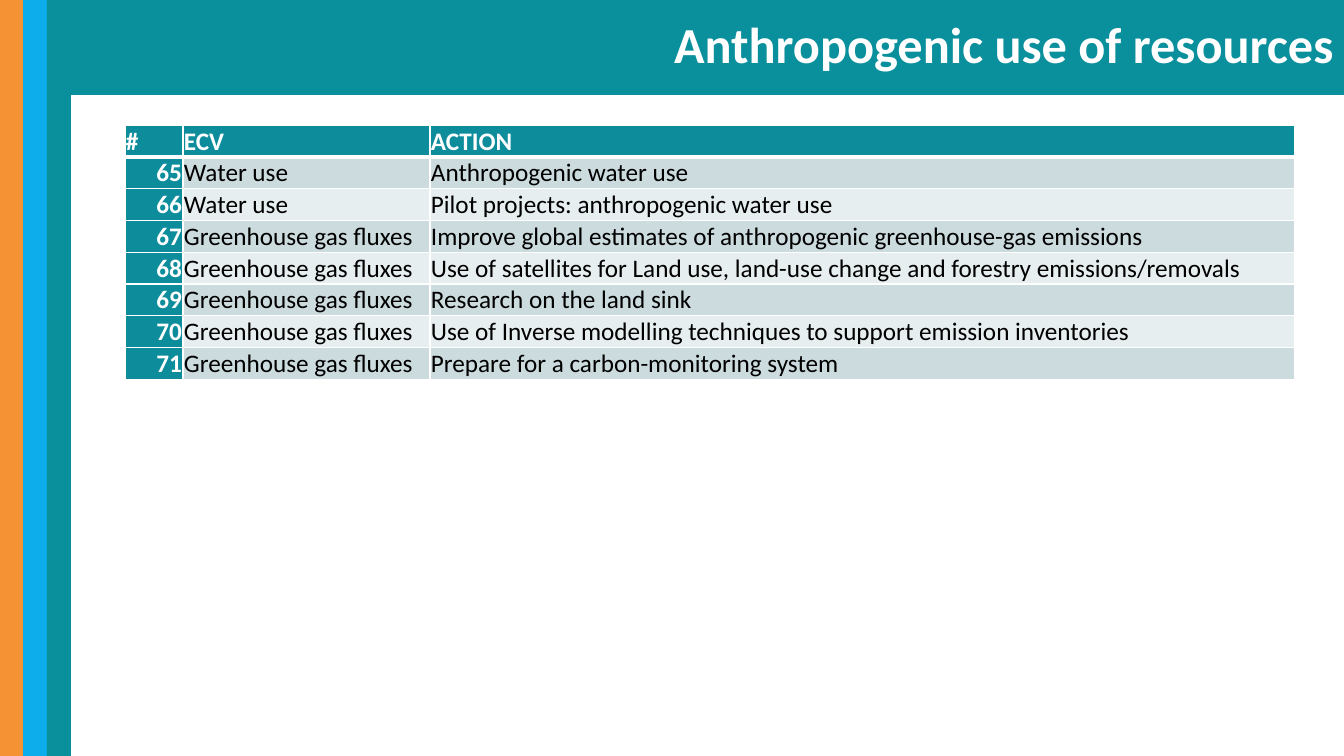
from lxml import etree
from pptx import Presentation
from pptx.dml.color import RGBColor
from pptx.enum.shapes import MSO_SHAPE
from pptx.enum.text import MSO_ANCHOR, PP_ALIGN
from pptx.oxml.ns import qn
from pptx.util import Pt

RECTANGLE = MSO_SHAPE.RECTANGLE
MIDDLE = MSO_ANCHOR.MIDDLE
LEFT, RIGHT, JUSTIFY = PP_ALIGN.LEFT, PP_ALIGN.RIGHT, PP_ALIGN.JUSTIFY

EMU_PER_PX = 914400 / 100.8
SLIDE_WIDTH, SLIDE_HEIGHT = 1344, 756
COLORS = {
    "orange": "F49234",
    "blue": "0CADEA",
    "teal": "0A8F9D",
    "table_teal": "0D8D9C",
    "dark_band": "CCDBDE",
    "light_band": "E7EEEF",
    "white": "FFFFFF",
    "black": "000000",
}
COLUMN_WIDTHS = [58, 247, 865]
ROW_HEIGHT = 21
HEADINGS = ["#", "ECV", "ACTION"]
FIRST_NUMBER = 65
ACTIONS = [
    ("Water use", "Anthropogenic water use"),
    ("Water use", "Pilot projects: anthropogenic water use"),
    ("Greenhouse gas fluxes", "Improve global estimates of anthropogenic greenhouse-gas emissions"),
    ("Greenhouse gas fluxes", "Use of satellites for Land use, land-use change and forestry emissions/removals"),
    ("Greenhouse gas fluxes", "Research on the land sink"),
    ("Greenhouse gas fluxes", "Use of Inverse modelling techniques to support emission inventories"),
    ("Greenhouse gas fluxes", "Prepare for a carbon-monitoring system"),
]


def px(value):
    return round(value * EMU_PER_PX)


def color(name):
    return RGBColor.from_string(COLORS[name])


def set_attributes(target, values):
    for name, value in values.items():
        setattr(target, name, value)


def write(text_frame, text, size, color_name, bold, alignment):
    paragraph = text_frame.paragraphs[0]
    paragraph.alignment = alignment
    run = paragraph.add_run()
    run.text = text
    set_attributes(run.font, {"name": "Calibri", "size": Pt(size), "bold": bold})
    run.font.color.rgb = color(color_name)
    return paragraph


def add_rectangle(slide, left, top, width, height, fill):
    shape = slide.shapes.add_shape(RECTANGLE, px(left), px(top), px(width), px(height))
    shape.shadow.inherit = False
    shape.fill.solid()
    shape.fill.fore_color.rgb = color(fill)
    shape.line.fill.background()
    return shape


def add_stripes(slide, left, top, width, height):
    names = ["orange", "blue", "teal"]
    edges = [left + width * index // len(names) for index in range(len(names) + 1)]
    for name, start, end in zip(names, edges, edges[1:]):
        add_rectangle(slide, start, top, end - start, height, name)


def add_title(slide, left, top, width, height):
    shape = add_rectangle(slide, left, top, width, height, "teal")
    set_attributes(shape.text_frame, {"word_wrap": True, "vertical_anchor": MIDDLE})
    paragraph = write(shape.text_frame, "Anthropogenic use of resources", 36, "white", True, RIGHT)
    paragraph.line_spacing = 0.9


def add_borders(cell, widths):
    properties = cell._tc.get_or_add_tcPr()
    for side, width in widths.items():
        line = etree.SubElement(properties, qn(f"a:ln{side}"), w=str(Pt(width)))
        fill = etree.SubElement(line, qn("a:solidFill"))
        etree.SubElement(fill, qn("a:srgbClr"), val=COLORS["white"])


def fill_cell(cell, text, row, column):
    is_heading = row == 0
    is_teal = is_heading or column == 0
    band = "dark_band" if row % 2 else "light_band"
    alignment = LEFT if is_heading else [RIGHT, LEFT, JUSTIFY][column]
    add_borders(cell, {"L": 1, "R": 1, "T": 3 if row == 1 else 1, "B": 3 if is_heading else 1})
    cell.fill.solid()
    cell.fill.fore_color.rgb = color("table_teal" if is_teal else band)
    set_attributes(cell, {
        "margin_left": px(1),
        "margin_top": px(1),
        "margin_right": px(1),
        "margin_bottom": 0,
        "vertical_anchor": MIDDLE,
    })
    write(cell.text_frame, text, 18, "white" if is_teal else "black", is_teal, alignment)


def add_action_table(slide, left, top, width, height):
    numbered = [(str(number), *action) for number, action in enumerate(ACTIONS, FIRST_NUMBER)]
    rows = [HEADINGS, *numbered]
    frame = slide.shapes.add_table(
        len(rows), len(HEADINGS), px(left), px(top), px(width), px(height))
    table = frame.table
    for column, column_width in zip(table.columns, COLUMN_WIDTHS):
        column.width = px(column_width)
    for row_index, texts in enumerate(rows):
        table.rows[row_index].height = px(ROW_HEIGHT)
        for column_index, text in enumerate(texts):
            fill_cell(table.cell(row_index, column_index), text, row_index, column_index)
    frame.height = px(height)


def main():
    presentation = Presentation()
    set_attributes(presentation, {"slide_width": px(SLIDE_WIDTH), "slide_height": px(SLIDE_HEIGHT)})
    slide = presentation.slides.add_slide(presentation.slide_layouts[6])
    add_stripes(slide, 0, 0, 71, SLIDE_HEIGHT)
    add_title(slide, 57, 0, SLIDE_WIDTH - 57, 95)
    add_action_table(slide, 125, 125, sum(COLUMN_WIDTHS), 250)
    presentation.save("out.pptx")


if __name__ == "__main__":
    main()
